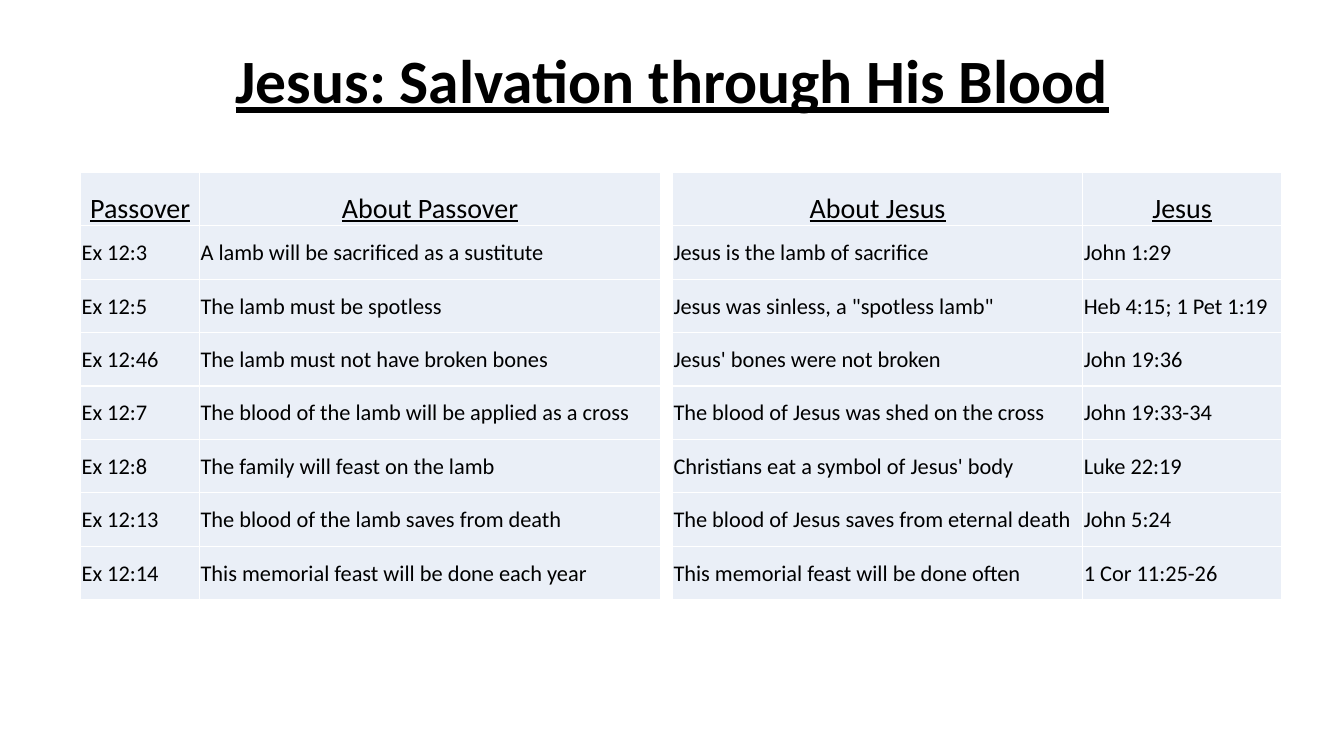
"""Build a slide that compares the Passover with Jesus in two tables."""
from dataclasses import dataclass

from lxml.etree import SubElement
from pptx import Presentation
from pptx.dml.color import RGBColor
from pptx.enum.text import MSO_ANCHOR, MSO_AUTO_SIZE, PP_ALIGN
from pptx.oxml.ns import qn
from pptx.slide import Slide
from pptx.table import _Cell
from pptx.text.text import _Paragraph
from pptx.util import Inches, Pt

FONT = "Calibri"
BLACK, WHITE, PALE_BLUE = "000000", "FFFFFF", "EAEFF7"
TABLE_TOP, ROW_HEIGHT = 1.71, 0.53


@dataclass(frozen=True)
class ComparisonTable:
    left: float
    widths: tuple[float, ...]
    rows: tuple[tuple[str, ...], ...]


TABLES = (
    ComparisonTable(6.67, (4.07, 1.97), (
        ("About Jesus", "Jesus"),
        ("Jesus is the lamb of sacrifice", "John 1:29"),
        ('Jesus was sinless, a "spotless lamb"', "Heb 4:15; 1 Pet 1:19"),
        ("Jesus' bones were not broken", "John 19:36"),
        ("The blood of Jesus was shed on the cross", "John 19:33-34"),
        ("Christians eat a symbol of Jesus' body", "Luke 22:19"),
        ("The blood of Jesus saves from eternal death", "John 5:24"),
        ("This memorial feast will be done often", "1 Cor 11:25-26"),
    )),
    ComparisonTable(0.8, (1.18, 4.57), (
        ("Passover", "About Passover"),
        ("Ex 12:3", "A lamb will be sacrificed as a sustitute"),
        ("Ex 12:5", "The lamb must be spotless"),
        ("Ex 12:46", "The lamb must not have broken bones"),
        ("Ex 12:7", "The blood of the lamb will be applied as a cross"),
        ("Ex 12:8", "The family will feast on the lamb"),
        ("Ex 12:13", "The blood of the lamb saves from death"),
        ("Ex 12:14", "This memorial feast will be done each year"),
    )),
)


def rgb(color: str) -> RGBColor:
    return RGBColor.from_string(color)


def format_paragraph(p: _Paragraph, size: int, heading: bool, bold: bool = False) -> None:
    p.alignment = PP_ALIGN.CENTER if heading else PP_ALIGN.LEFT
    p.font.name = FONT
    p.font.size = Pt(size)
    p.font.bold = bold
    p.font.underline = heading
    p.font.color.rgb = rgb(BLACK)


def add_borders(cell: _Cell, color: str) -> None:
    tc_pr = cell._tc.get_or_add_tcPr()
    for side in ("lnL", "lnR", "lnT", "lnB"):
        line = SubElement(tc_pr, qn(f"a:{side}"), w=str(Pt(1)))
        fill = SubElement(line, qn("a:solidFill"))
        SubElement(fill, qn("a:srgbClr"), val=color)


def fill_cell(cell: _Cell, text: str, heading: bool) -> None:
    cell.text = text
    cell.margin_left = cell.margin_right = cell.margin_top = Inches(0.01)
    cell.margin_bottom = Inches(0)
    cell.vertical_anchor = MSO_ANCHOR.BOTTOM if heading else MSO_ANCHOR.MIDDLE
    format_paragraph(cell.text_frame.paragraphs[0], 20 if heading else 16, heading)
    add_borders(cell, WHITE)
    cell.fill.solid()
    cell.fill.fore_color.rgb = rgb(PALE_BLUE)


def add_comparison(s: Slide, spec_table: ComparisonTable) -> None:
    rows, widths = spec_table.rows, spec_table.widths
    table = s.shapes.add_table(
        len(rows), len(widths), Inches(spec_table.left), Inches(TABLE_TOP),
        Inches(sum(widths)), Inches(ROW_HEIGHT * len(rows))).table
    table.first_row = table.horz_banding = False
    for column, width in zip(table.columns, widths):
        column.width = Inches(width)
    for i, texts in enumerate(rows):
        table.rows[i].height = Inches(ROW_HEIGHT)
        for j, text in enumerate(texts):
            fill_cell(table.cell(i, j), text, heading=i == 0)


def add_title(s: Slide, text: str) -> None:
    sp = s.shapes.title
    sp.left, sp.top, sp.width, sp.height = map(Inches, (0.92, 0.31, 11.5, 1.04))
    tf = sp.text_frame
    tf.text = text
    tf.word_wrap = True
    tf.auto_size = MSO_AUTO_SIZE.NONE
    tf.vertical_anchor = MSO_ANCHOR.MIDDLE
    p = tf.paragraphs[0]
    p.line_spacing = 0.9
    format_paragraph(p, 44, heading=True, bold=True)


def main() -> None:
    prs = Presentation()
    prs.slide_width, prs.slide_height = Inches(13.33), Inches(7.5)
    s = prs.slides.add_slide(prs.slide_layouts.get_by_name("Title Only"))
    add_title(s, "Jesus: Salvation through His Blood")
    for comparison in TABLES:
        add_comparison(s, comparison)
    prs.save("out.pptx")


if __name__ == "__main__":
    main()
